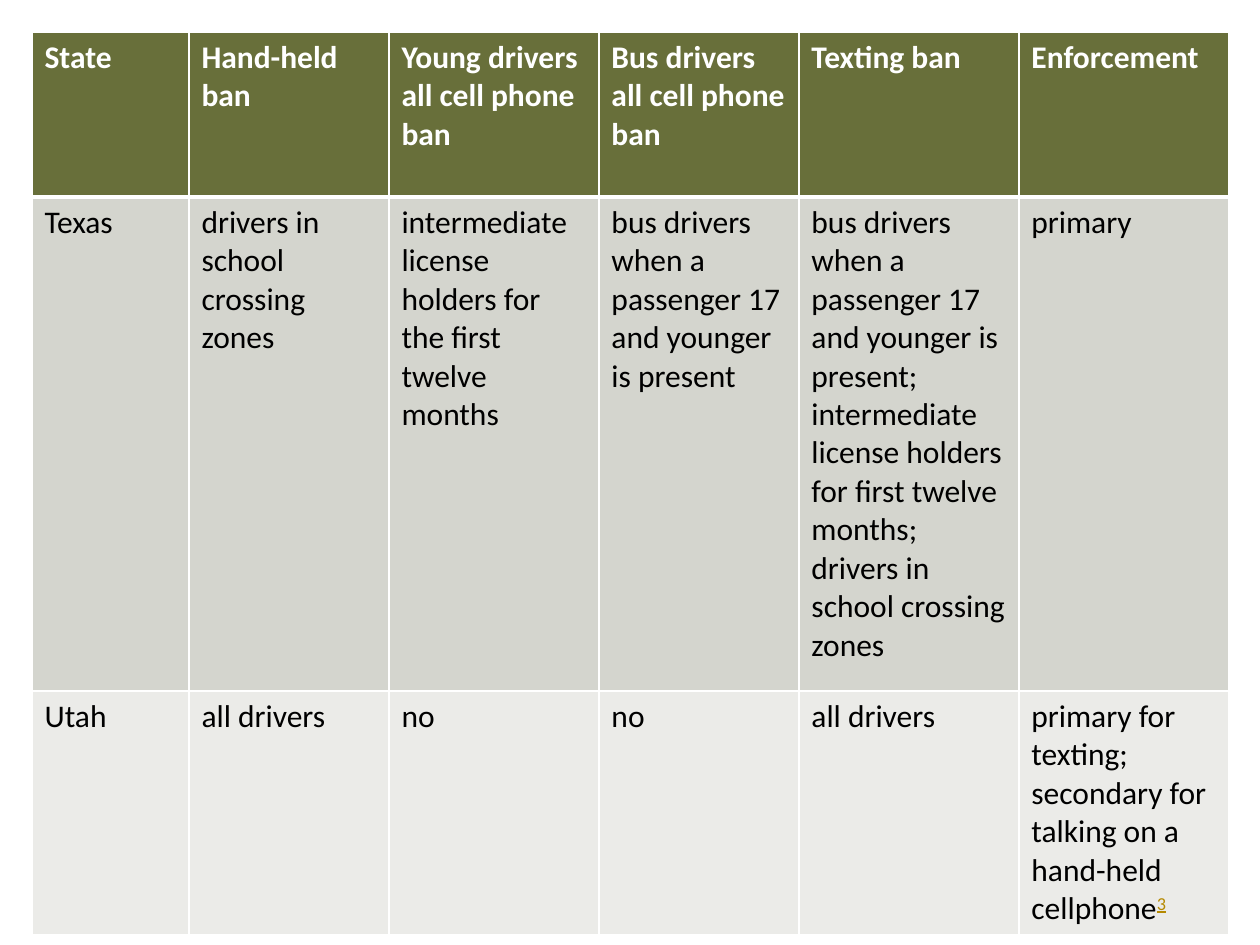
import pptx
import pptx.util
import pptx.dml.color
import lxml.etree

PX = 914400 / 126
A = "http://schemas.openxmlformats.org/drawingml/2006/main"


def px(n):
    return pptx.util.Emu(round(n * PX))


def rgb(h):
    return pptx.dml.color.RGBColor.from_string(h)


prs = pptx.Presentation()
prs.slide_width, prs.slide_height = px(1260), px(945)
s = prs.slides.add_slide(prs.slide_layouts[6])

cols = [157, 200, 210, 200, 220, 210]
rows = [165, 494, 243]
fills = ["686F3A", "D4D5CE", "EBEBE8"]
texts = [
    ["State", "Hand-held ban", "Young drivers all cell phone ban",
     "Bus drivers all cell phone ban", "Texting ban", "Enforcement"],
    ["Texas", "drivers in school crossing zones",
     "intermediate license holders for the first twelve months",
     "bus drivers when a passenger 17 and younger is present",
     "bus drivers when a passenger 17 and younger is present; "
     "intermediate license holders for first twelve months; "
     "drivers in school crossing zones", "primary"],
    ["Utah", "all drivers", "no", "no", "all drivers",
     "primary for texting; secondary for talking on a hand-held cellphone"],
]
head = {"name": "Calibri", "size": pptx.util.Pt(18), "bold": True}
body = {**head, "bold": False}
note = {**body, "underline": True}

tbl = s.shapes.add_table(len(rows), len(cols), px(32), px(32),
                         px(sum(cols)), px(sum(rows))).table
for col, w in zip(tbl.columns, cols):
    col.width = px(w)
for row, h in zip(tbl.rows, rows):
    row.height = px(h)

for i, line in enumerate(texts):
    for j, text in enumerate(line):
        cell = tbl.cell(i, j)
        cell.fill.solid()
        cell.fill.fore_color.rgb = rgb(fills[i])
        p = cell.text_frame.paragraphs[0]
        runs = [(text, head if i == 0 else body, "FFFFFF" if i == 0 else "000000")]
        if (i, j) == (2, 5):
            runs.append(("3", note, "B58900"))
        for words, fmt, color in runs:
            r = p.add_run()
            r.text = words
            for key, value in fmt.items():
                setattr(r.font, key, value)
            r.font.color.rgb = rgb(color)
            if fmt is note:
                r.font._element.set("baseline", "30000")
        tcPr = cell._tc.get_or_add_tcPr()
        for k, side in enumerate(["lnL", "lnR", "lnT", "lnB"]):
            thick = (i, side) in [(0, "lnB"), (1, "lnT")]
            ln = lxml.etree.Element(f"{{{A}}}{side}", w=str(pptx.util.Pt(3 if thick else 1)))
            fill = lxml.etree.SubElement(ln, f"{{{A}}}solidFill")
            lxml.etree.SubElement(fill, f"{{{A}}}srgbClr", val="FFFFFF")
            tcPr.insert(k, ln)

prs.save("out.pptx")
